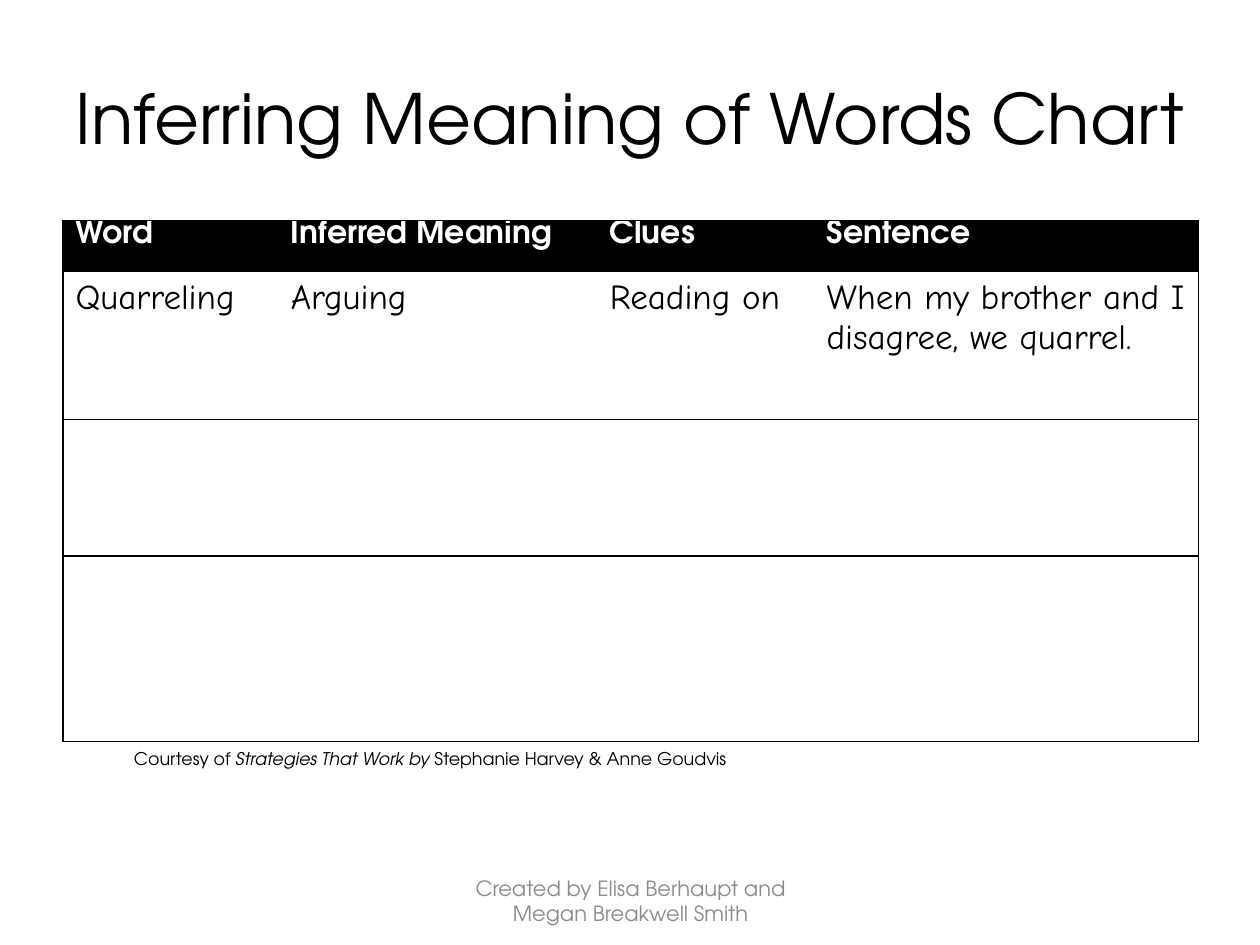
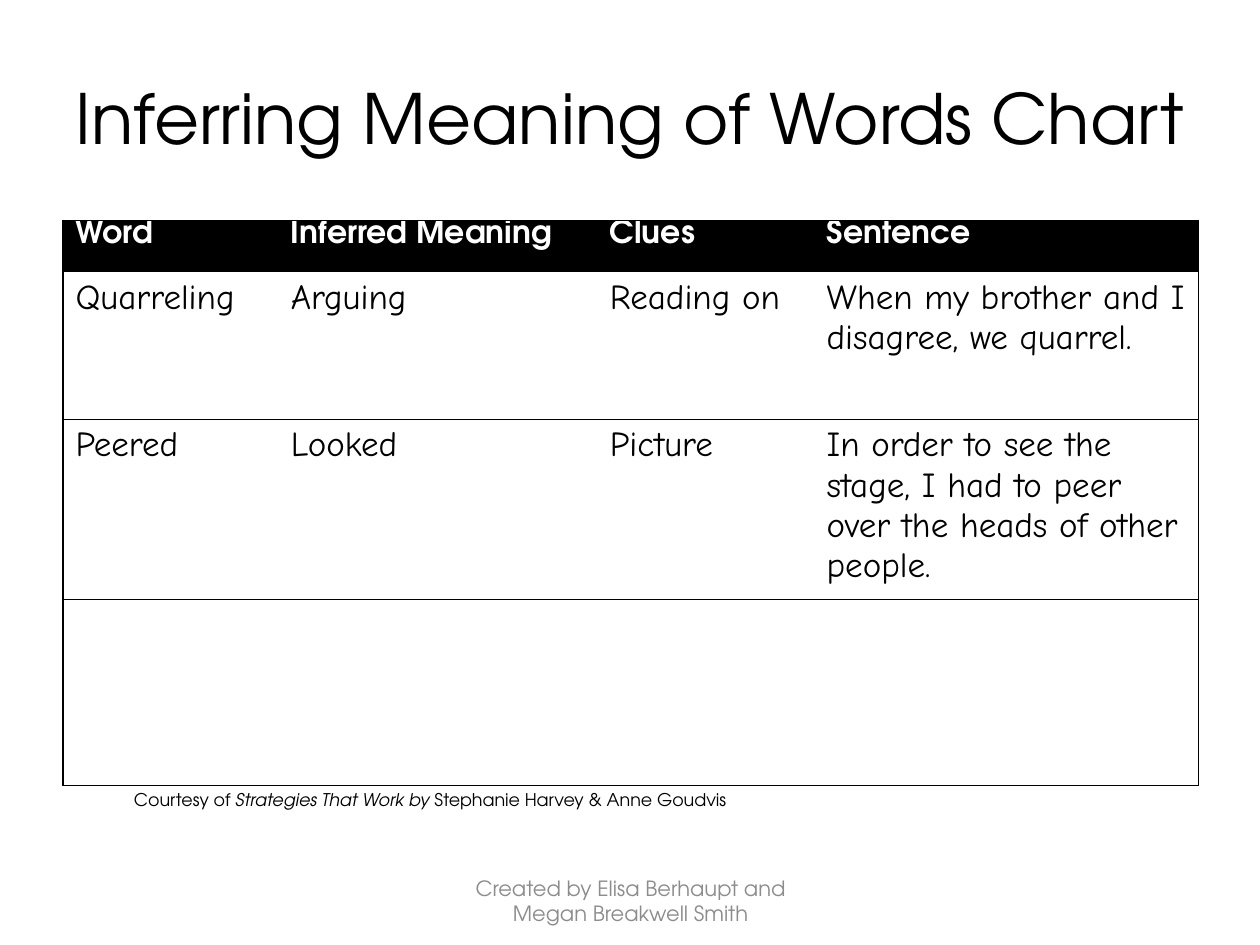
from pptx import Presentation
from pptx.dml.color import RGBColor
from pptx.enum.text import MSO_ANCHOR as Anchor, PP_ALIGN as Align
from pptx.oxml import parse_xml
from pptx.oxml.ns import nsdecls
from pptx.util import Cm, Pt

BLANK_LAYOUT = 6
COLUMN_WIDTHS = (4.34, 6.43, 4.37, 7.75)
HEADERS = ("Word", "Inferred Meaning", "Clues", "Sentence")
QUARRELING = ("Quarreling", "Arguing", "Reading on",
              "When my brother and I disagree, we quarrel.")
PEERED = ("Peered", "Looked", "Picture",
          "In order to see the stage, I had to peer over the heads of other people.")
EMPTY = ("",) * len(HEADERS)


def color(hex_value):
    return RGBColor.from_string(hex_value)


class WordChartDeck:
    """Holds the shared style and the current slide."""

    black, white, gray = "000000", "FFFFFF", "8C8C8C"
    text_font, entry_font = "TeX Gyre Adventor", "Comic Neue"

    def __init__(self):
        self.presentation = Presentation()
        self.presentation.slide_width = Cm(25.4)
        self.presentation.slide_height = Cm(19.05)
        self.slide = None

    def add_slide(self):
        layout = self.presentation.slide_layouts[BLANK_LAYOUT]
        self.slide = self.presentation.slides.add_slide(layout)

    def style_font(self, font, name, size, hex_value, bold=False):
        font.name, font.size, font.bold = name, Pt(size), bold
        font.color.rgb = color(hex_value)

    # Text: a list of (wording, italic) runs in one centred paragraph
    def text(self, left, top, width, height, runs, size, hex_value=black, margin=0.25):
        box = self.slide.shapes.add_textbox(Cm(left), Cm(top), Cm(width), Cm(height))
        frame = box.text_frame
        frame.word_wrap = True
        frame.vertical_anchor = Anchor.MIDDLE
        frame.margin_left = frame.margin_right = Cm(margin)
        paragraph = frame.paragraphs[0]
        paragraph.alignment = Align.CENTER
        self.style_font(paragraph.font, self.text_font, size, hex_value)
        for wording, italic in runs:
            run = paragraph.add_run()
            run.text = wording
            if italic:
                run.font.italic = True

    def title(self, wording):
        self.text(1.27, 0.76, 22.86, 3.18, [(wording, False)], 39.6, margin=0.1)

    def footer(self, wording):
        self.text(8.69, 17.65, 8.05, 1.02, [(wording, False)], 12, self.gray)

    def source_note(self, top):
        runs = [("Courtesy of ", False), ("Strategies That Work by ", True),
                ("Stephanie Harvey & Anne Goudvis", False)]
        self.text(1.24, top, 14.86, 0.76, runs, 10)

    # Table: black header, horizontal rules and an outer frame
    def cell_borders(self, cell, visible_sides):
        properties = cell._tc.get_or_add_tcPr()
        for side in "LRTB":
            paint = (f'<a:solidFill><a:srgbClr val="{self.black}"/></a:solidFill>'
                     if side in visible_sides else "<a:noFill/>")
            properties.append(parse_xml(
                f'<a:ln{side} {nsdecls("a")} w="{Pt(0.75)}">{paint}</a:ln{side}>'))

    def fill_cell(self, cell, wording, is_header, visible_sides):
        self.cell_borders(cell, visible_sides)
        cell.fill.solid()
        cell.fill.fore_color.rgb = color(self.black if is_header else self.white)
        cell.text = wording
        font = cell.text_frame.paragraphs[0].font
        if is_header:
            cell.margin_top = 0
            self.style_font(font, self.text_font, 18, self.white, bold=True)
        else:
            self.style_font(font, self.entry_font, 20, self.black)

    def word_table(self, entries, row_heights):
        rows = [HEADERS, *entries]
        table = self.slide.shapes.add_table(
            len(rows), len(HEADERS), Cm(1.27), Cm(4.44),
            Cm(sum(COLUMN_WIDTHS)), Cm(sum(row_heights))).table
        table.first_row = table.horz_banding = False
        for column, width in zip(table.columns, COLUMN_WIDTHS):
            column.width = Cm(width)
        for row, height in zip(table.rows, row_heights):
            row.height = Cm(height)
        outer_sides = {0: "L", len(HEADERS) - 1: "R"}
        for row_index, wordings in enumerate(rows):
            for column_index, wording in enumerate(wordings):
                self.fill_cell(table.cell(row_index, column_index), wording,
                               row_index == 0, "TB" + outer_sides.get(column_index, ""))

    def word_chart_slide(self, entries, row_heights, note_top):
        self.add_slide()
        self.title("Inferring Meaning of Words Chart")
        self.word_table(entries, row_heights)
        self.footer("Created by Elisa Berhaupt and Megan Breakwell Smith")
        self.source_note(note_top)


def main():
    deck = WordChartDeck()
    deck.word_chart_slide([QUARRELING, EMPTY, EMPTY], (1.03, 2.98, 2.76, 3.74), 14.91)
    deck.word_chart_slide([QUARRELING, PEERED, EMPTY], (1.03, 2.98, 3.5, 3.74), 15.73)
    deck.presentation.save("out.pptx")


if __name__ == "__main__":
    main()
